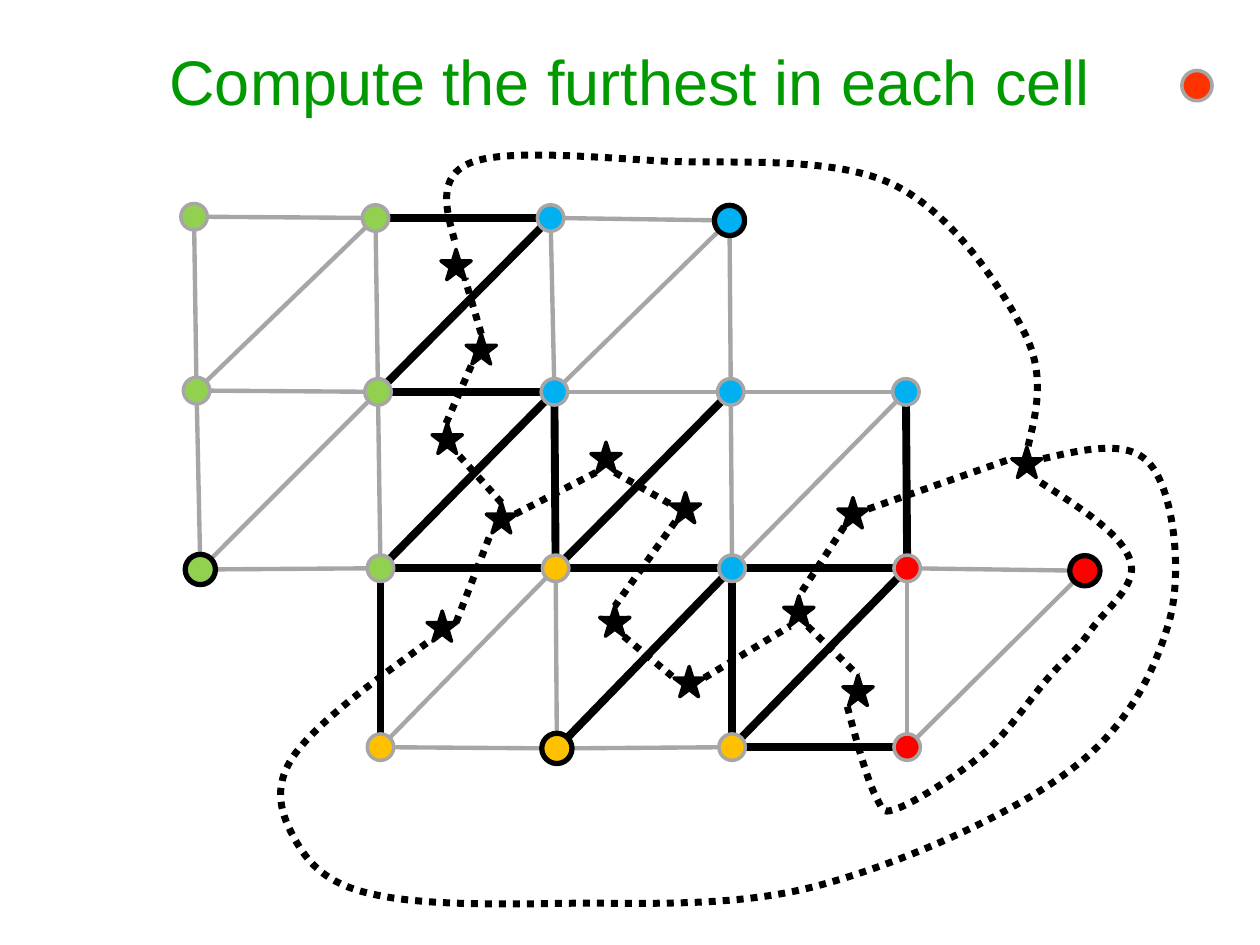
from math import hypot

from lxml import etree
from pptx import Presentation
from pptx.dml.color import RGBColor
from pptx.enum.dml import MSO_LINE
from pptx.enum.shapes import MSO_CONNECTOR, MSO_SHAPE
from pptx.enum.text import MSO_ANCHOR, PP_ALIGN
from pptx.oxml.ns import qn
from pptx.util import Inches, Pt

OVAL = MSO_SHAPE.OVAL
STAR = MSO_SHAPE.STAR_5_POINT
STRAIGHT = MSO_CONNECTOR.STRAIGHT
DOTTED = MSO_LINE.ROUND_DOT  # the sysDot preset
CENTER = PP_ALIGN.CENTER
MIDDLE = MSO_ANCHOR.MIDDLE

WHITE = RGBColor(0xFF, 0xFF, 0xFF)
BLACK = RGBColor(0, 0, 0)
GRAY = RGBColor(0xA6, 0xA6, 0xA6)
TITLE_GREEN = RGBColor(0x00, 0x99, 0x00)
GREEN = RGBColor(0x92, 0xD0, 0x50)
BLUE = RGBColor(0x00, 0xB0, 0xF0)
YELLOW = RGBColor(0xFF, 0xC0, 0x00)
RED = RGBColor(0xFF, 0x00, 0x00)
ORANGE_RED = RGBColor(0xFF, 0x33, 0x00)

NODE_SIZE = 0.21
LARGE_SIZE = 0.24  # furthest nodes, stars and the marker
BOUND_STEPS = 24

# Mesh rows: first column, then (center x, center y, cell colour)
MESH_ROWS = [
    (0, [(1.54, 1.72, GREEN), (2.98, 1.73, GREEN), (4.37, 1.73, BLUE), (5.79, 1.75, BLUE)]),
    (0, [(1.56, 3.1, GREEN), (3.0, 3.11, GREEN), (4.4, 3.11, BLUE), (5.8, 3.11, BLUE),
         (7.19, 3.11, BLUE)]),
    (0, [(1.59, 4.52, GREEN), (3.02, 4.51, GREEN), (4.41, 4.51, YELLOW), (5.81, 4.51, BLUE),
         (7.2, 4.51, RED), (8.61, 4.53, RED)]),
    (1, [(3.02, 5.93, YELLOW), (4.42, 5.94, YELLOW), (5.81, 5.93, YELLOW), (7.2, 5.93, RED)]),
]
# The furthest node of each cell, as (row, column)
FURTHEST = {(0, 3), (2, 0), (2, 5), (3, 2)}
# A node joins its right, lower and lower-left neighbours
NEIGHBOURS = [(0, 1), (1, 0), (1, -1)]

STAR_CENTERS = [
    (8.15, 3.67), (6.77, 4.07), (6.34, 4.85), (6.81, 5.48), (5.44, 4.03),
    (4.88, 4.93), (5.47, 5.41), (3.51, 4.97), (3.98, 4.11), (3.55, 3.48),
    (3.82, 2.77), (3.62, 2.1), (4.81, 3.63),
]
DUAL_LINKS = [
    ((3.62, 4.94), (3.9, 4.22)), ((3.98, 3.99), (3.62, 3.59)), ((3.54, 3.36), (3.75, 2.88)),
    ((3.82, 2.65), (3.69, 2.21)), ((4.09, 4.08), (4.73, 3.75)), ((4.88, 3.75), (5.32, 4.0)),
    ((5.36, 4.14), (4.88, 4.81)), ((4.95, 5.05), (5.35, 5.38)), ((5.59, 5.38), (6.27, 4.97)),
    ((6.7, 4.18), (6.34, 4.73)), ((6.89, 4.04), (8.03, 3.64)), ((6.41, 4.97), (6.81, 5.36)),
]
# Cubic curves: a start point, then two controls and an end per section
OUTER_CURVES = [
    [(8.16, 3.54), (8.23, 3.25), (8.3, 2.96), (8.12, 2.62), (7.94, 2.27), (7.55, 1.68),
     (7.08, 1.46), (6.61, 1.24), (5.85, 1.3), (5.29, 1.28), (4.73, 1.25), (4.02, 1.18),
     (3.74, 1.29), (3.46, 1.4), (3.54, 1.67), (3.62, 1.95)],
    [(8.26, 3.83), (8.59, 4.04), (8.91, 4.25), (8.97, 4.45), (9.04, 4.64), (8.77, 4.84),
     (8.66, 5.0), (8.55, 5.16), (8.46, 5.22), (8.32, 5.38), (8.18, 5.54), (8.01, 5.8),
     (7.82, 5.97), (7.62, 6.14), (7.29, 6.35), (7.14, 6.41), (7.0, 6.46), (7.02, 6.45),
     (6.95, 6.32), (6.88, 6.18), (6.8, 5.89), (6.72, 5.59)],
    [(8.28, 3.64), (8.63, 3.56), (8.98, 3.48), (9.14, 3.7), (9.31, 3.91), (9.39, 4.53),
     (9.28, 4.93), (9.16, 5.34), (8.95, 5.78), (8.47, 6.13), (8.0, 6.48), (7.12, 6.87),
     (6.45, 7.04), (5.78, 7.21), (5.03, 7.16), (4.45, 7.17), (3.86, 7.18), (3.29, 7.18),
     (2.93, 7.09), (2.58, 7.01), (2.44, 6.84), (2.34, 6.66), (2.24, 6.48), (2.15, 6.26),
     (2.33, 6.0), (2.51, 5.74), (2.96, 5.41), (3.42, 5.08)],
]


def bezier_point(section, t):
    weights = ((1 - t) ** 3, 3 * t * (1 - t) ** 2, 3 * t * t * (1 - t), t ** 3)
    return tuple(sum(w * point[axis] for w, point in zip(weights, section)) for axis in (0, 1))


class SlideBuilder:
    """Holds the drawing style and the current slide."""

    font_name = "Arial"
    title_size = Pt(36)
    dotted_width = 4

    def __init__(self, slide):
        self.slide = slide
        slide.background.fill.solid()
        slide.background.fill.fore_color.rgb = WHITE

    def title(self, text, left, top, width, height):
        shape = self.slide.shapes.title
        shape.left, shape.top = Inches(left), Inches(top)
        shape.width, shape.height = Inches(width), Inches(height)
        frame = shape.text_frame
        frame.text = text
        frame.vertical_anchor = MIDDLE
        paragraph = frame.paragraphs[0]
        paragraph.alignment = CENTER
        paragraph.font.name = self.font_name
        paragraph.font.size = self.title_size
        paragraph.font.color.rgb = TITLE_GREEN

    def style_line(self, line, color, width, dotted=False):
        line.color.rgb = color
        line.width = Pt(width)
        if dotted:
            line.dash_style = DOTTED

    def marker(self, kind, center, size, fill, outline=BLACK, width=2):
        x, y = center
        shape = self.slide.shapes.add_shape(
            kind, Inches(x - size / 2), Inches(y - size / 2), Inches(size), Inches(size))
        shape.shadow.inherit = False
        shape.fill.solid()
        shape.fill.fore_color.rgb = fill
        self.style_line(shape.line, outline, width)

    def connector(self, start, end, color, width, dotted=False):
        line = self.slide.shapes.add_connector(
            STRAIGHT, *(Inches(value) for value in (*start, *end)))
        self.style_line(line.line, color, width, dotted)
        etree.SubElement(line._element.spPr, qn("a:effectLst"))

    def edge(self, start, end, start_radius, end_radius, color, width):
        """Join two circles from rim to rim."""
        dx, dy = end[0] - start[0], end[1] - start[1]
        length = hypot(dx, dy)
        ux, uy = dx / length, dy / length
        self.connector((start[0] + ux * start_radius, start[1] + uy * start_radius),
                       (end[0] - ux * end_radius, end[1] - uy * end_radius), color, width)

    def dotted_curve(self, controls):
        sections = [controls[i:i + 4] for i in range(0, len(controls) - 1, 3)]
        # The two corners of the curve's bounds set the place and size of the shape
        xs, ys = zip(*(bezier_point(section, step / BOUND_STEPS)
                       for section in sections for step in range(BOUND_STEPS + 1)))
        builder = self.slide.shapes.build_freeform(Inches(min(xs)), Inches(min(ys)))
        builder.add_line_segments([(Inches(max(xs)), Inches(max(ys)))], close=False)
        shape = builder.convert_to_shape()

        # The outline itself is made of cubic sections
        outline = shape._element.find(".//" + qn("a:path"))
        for child in list(outline):
            outline.remove(child)
        commands = [("a:moveTo", controls[:1])]
        commands += [("a:cubicBezTo", section[1:]) for section in sections]
        for tag, points in commands:
            command = etree.SubElement(outline, qn(tag))
            for x, y in points:
                etree.SubElement(command, qn("a:pt"), x=str(Inches(x) - shape.left),
                                 y=str(Inches(y) - shape.top))
        shape.shadow.inherit = False
        shape.fill.background()
        self.style_line(shape.line, BLACK, self.dotted_width, dotted=True)


def draw_mesh(builder):
    nodes = {(row, first + i): node
             for row, (first, row_nodes) in enumerate(MESH_ROWS)
             for i, node in enumerate(row_nodes)}
    sizes = {key: LARGE_SIZE if key in FURTHEST else NODE_SIZE for key in nodes}

    # Edges between different cells are bold
    for (row, column), (x, y, color) in nodes.items():
        for row_step, column_step in NEIGHBOURS:
            other = (row + row_step, column + column_step)
            if other in nodes:
                other_x, other_y, other_color = nodes[other]
                style = (GRAY, 2.5) if color == other_color else (BLACK, 4.5)
                builder.edge((x, y), (other_x, other_y),
                             sizes[row, column] / 2, sizes[other] / 2, *style)

    for key, (x, y, color) in nodes.items():
        outline = (BLACK, 3) if key in FURTHEST else (GRAY, 2)
        builder.marker(OVAL, (x, y), sizes[key], color, *outline)


def main():
    presentation = Presentation()
    presentation.slide_width, presentation.slide_height = Inches(10), Inches(7.5)
    builder = SlideBuilder(presentation.slides.add_slide(presentation.slide_layouts[5]))
    builder.title("Compute the furthest in each cell", 0.75, 0.01, 8.5, 1.25)
    draw_mesh(builder)

    # Dual graph
    for center in STAR_CENTERS:
        builder.marker(STAR, center, LARGE_SIZE, BLACK)
    for start, end in DUAL_LINKS:
        builder.connector(start, end, BLACK, builder.dotted_width, dotted=True)
    for controls in OUTER_CURVES:
        builder.dotted_curve(controls)

    # Marker beside the title
    builder.marker(OVAL, (9.5, 0.68), LARGE_SIZE, ORANGE_RED, GRAY)
    presentation.save("out.pptx")


if __name__ == "__main__":
    main()
